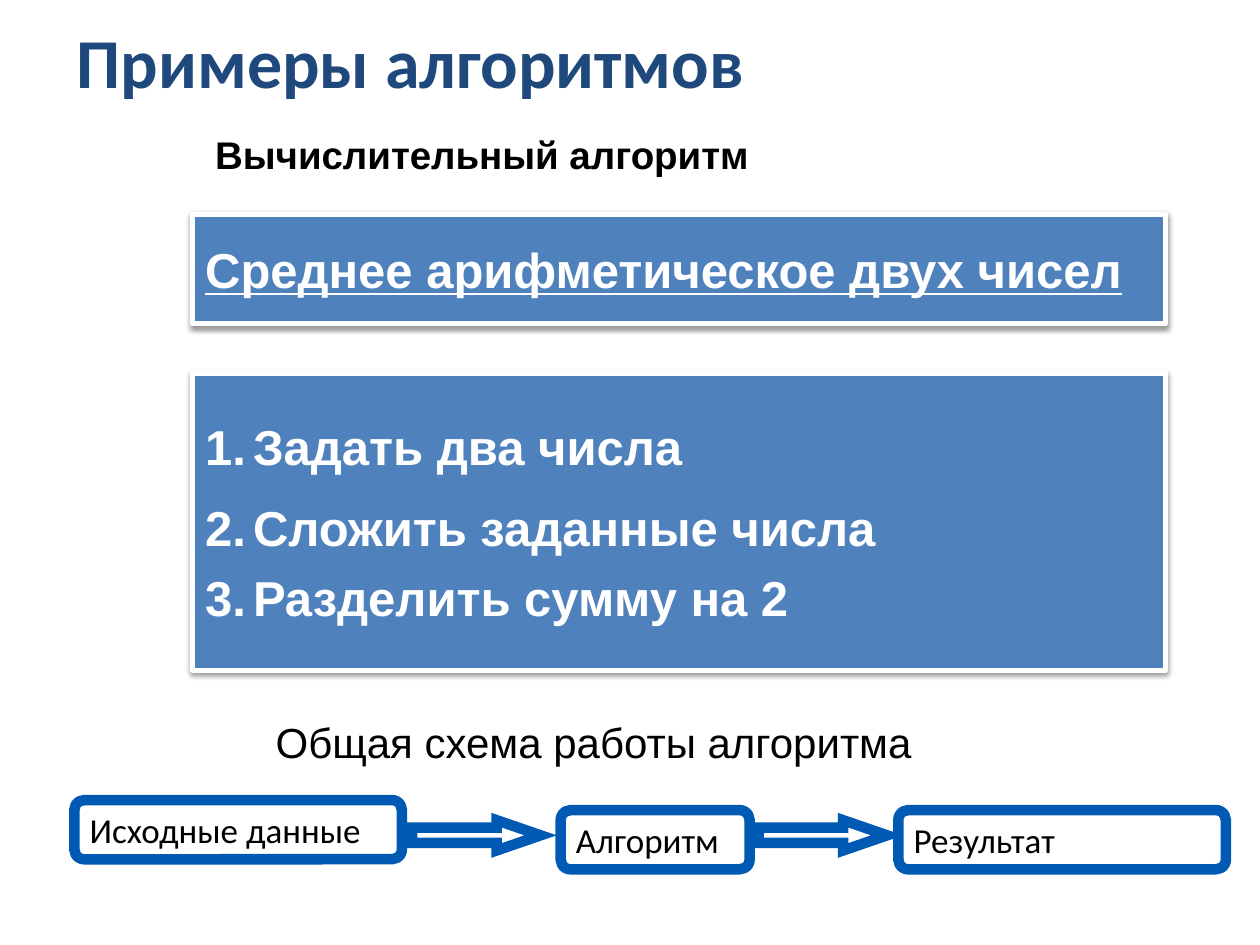
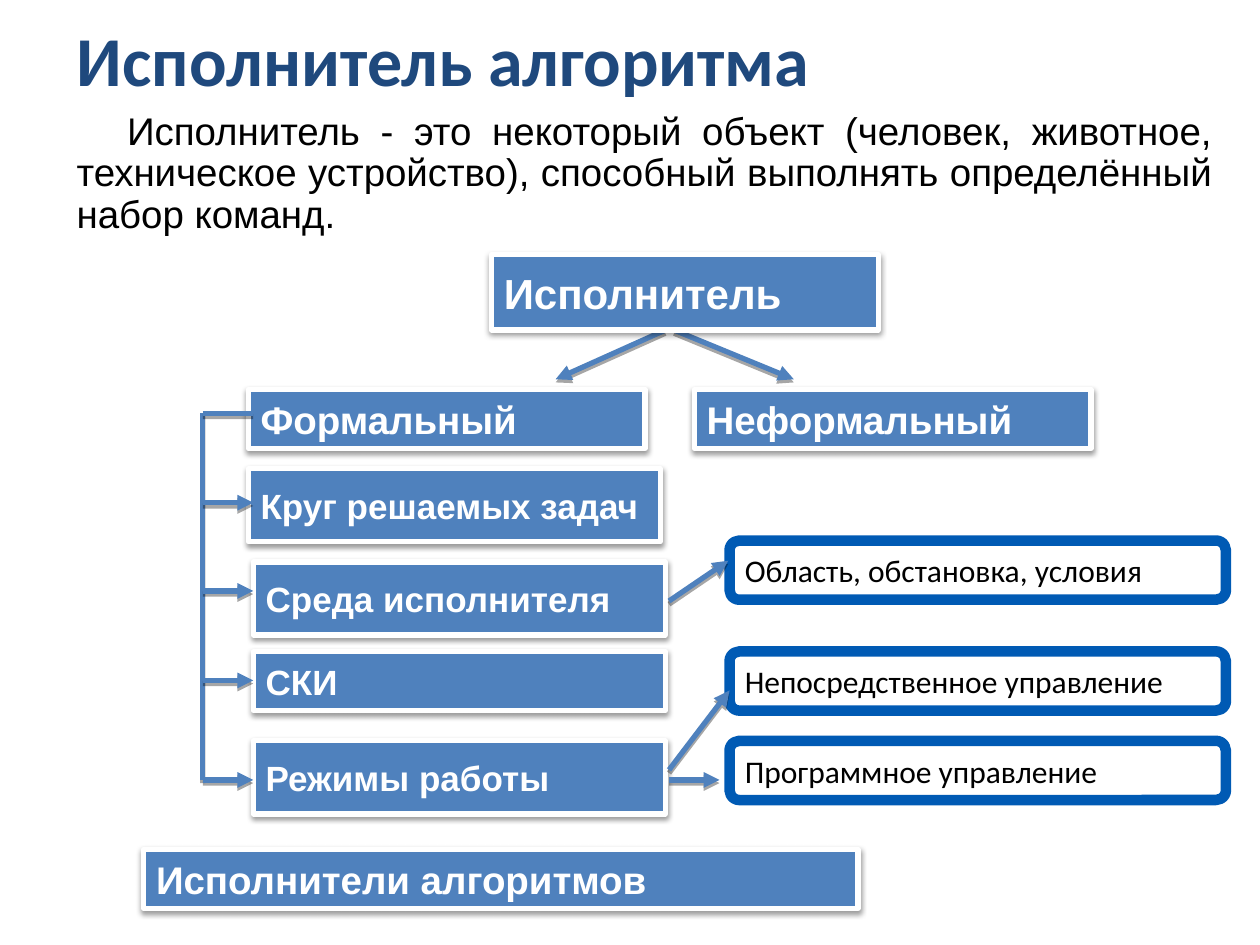
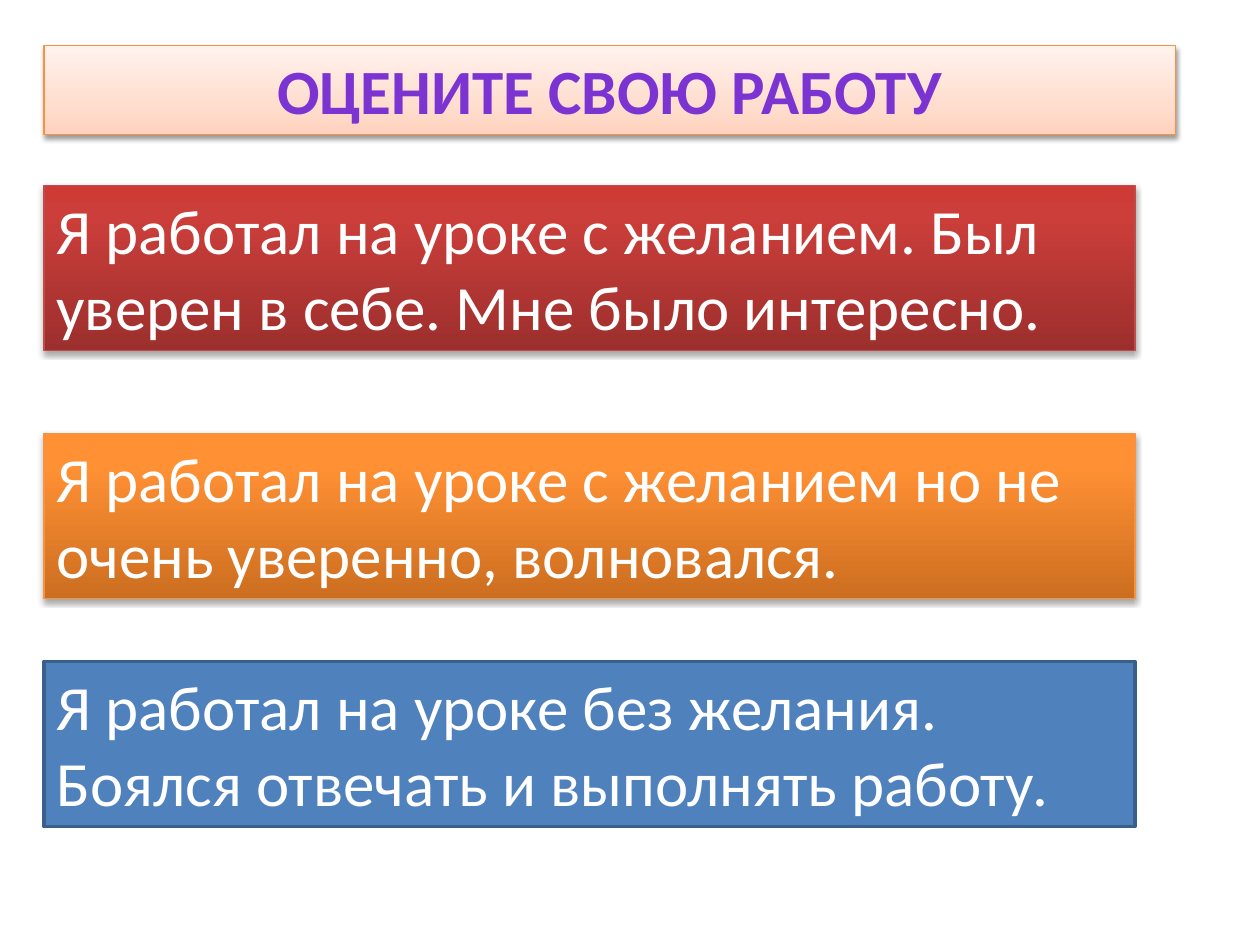
from lxml import etree
from pptx import Presentation
from pptx import util as u
from pptx.dml.color import RGBColor
from pptx.enum import shapes, text
from pptx.oxml.ns import qn

PX = 9144  # 100 px to the inch
NAVY = RGBColor(0x1F, 0x49, 0x7D)
BLUE = RGBColor(0x4F, 0x81, 0xBD)
BLUE_EDGE = RGBColor(0x3A, 0x5F, 0x8C)
FRAME = RGBColor(0x00, 0x5A, 0xB4)
RED_EDGE = RGBColor(0xBF, 0x4C, 0x48)
ORANGE_EDGE = RGBColor(0xF6, 0x92, 0x40)
VIOLET_EDGE = RGBColor(0x5E, 0x45, 0x7C)
WHITE = RGBColor(0xFF, 0xFF, 0xFF)
BLACK = RGBColor(0x00, 0x00, 0x00)

# Gradient stops: percent and colour
PEACH = [(0, "FFD2BD"), (35, "FFDED0"), (100, "FFF2ED")]
RED = [(0, "9C2F2D"), (80, "CB3E3A"), (100, "CE3B37")]
ORANGE = [(0, "CC6E20"), (80, "FF9034"), (100, "FF9136")]
VIOLET = [(0, "3D1B67"), (43, "7B34D2"), (48, "7330C4"), (100, "3D1B67")]

# Shadows: opacity in percent, blur and distance in points
CARD_SHADOW = (38, 3.1, 1.6)
BANNER_SHADOW = (35, 3.1, 1.8)
LINE_SHADOW = (35, 0, 1.8)

LEFT, CENTER, JUSTIFY = text.PP_ALIGN.LEFT, text.PP_ALIGN.CENTER, text.PP_ALIGN.JUSTIFY
TOP, MIDDLE = text.MSO_ANCHOR.TOP, text.MSO_ANCHOR.MIDDLE
RECT, ROUND = shapes.MSO_SHAPE.RECTANGLE, shapes.MSO_SHAPE.ROUNDED_RECTANGLE


def write(box, lines, size, font="Arial", color=BLACK, bold=False, underline=None,
          align=LEFT, anchor=MIDDLE, spacing=None, margin=0, indent=0,
          numbered=False, gaps=None):
    """Fill a shape with one paragraph per line; gaps are (before, after) points."""
    frame = box.text_frame
    frame.word_wrap = True
    frame.auto_size = text.MSO_AUTO_SIZE.NONE
    frame.vertical_anchor = anchor
    for number, line in enumerate(lines.split("\n")):
        para = frame.add_paragraph() if number else frame.paragraphs[0]
        properties = para._p.get_or_add_pPr()
        properties.set("marL", str(margin * PX))
        properties.set("indent", str(indent * PX))
        if numbered:
            etree.SubElement(properties, qn("a:buAutoNum"), type="arabicPeriod")
        para.alignment = align
        if spacing:
            para.line_spacing = spacing
        if gaps:
            before, after = gaps[number]
            para.space_before, para.space_after = u.Pt(before), u.Pt(after)
        span = para.add_run()
        span.text = line
        span.font.name, span.font.size = font, u.Pt(size)
        span.font.bold, span.font.underline = bold, underline
        span.font.color.rgb = color


def paint(item, line, width, fill=None, shadow=None, arrow=False):
    """Set the outline, fill and shadow of a shape or connector."""
    item.line.color.rgb = line
    item.line.width = u.Pt(width)
    if arrow:
        etree.SubElement(item.line._get_or_add_ln(), qn("a:tailEnd"), type="triangle")
    if fill:
        item.fill.solid()
        item.fill.fore_color.rgb = fill
    elif hasattr(item, "fill"):
        item.fill.background()
    effects = etree.SubElement(item._element.spPr, qn("a:effectLst"))
    if shadow:
        opacity, blur, distance = shadow
        outer = etree.SubElement(effects, qn("a:outerShdw"), blurRad=str(u.Pt(blur)),
                                 dist=str(u.Pt(distance)), dir="5400000", rotWithShape="0")
        tone = etree.SubElement(outer, qn("a:srgbClr"), val="000000")
        etree.SubElement(tone, qn("a:alpha"), val=str(opacity * 1000))


deck = Presentation()
deck.slide_width, deck.slide_height = 1000 * PX, 750 * PX
title_only = deck.slide_layouts[5]
examples, performer, review = (deck.slides.add_slide(title_only) for _ in range(3))

# Titles of the first two slides
for page, heading, spacing in [(examples, "Примеры алгоритмов", 0.9),
                               (performer, "Исполнитель алгоритма", 0.8)]:
    title = page.shapes.title
    title.left, title.top, title.width, title.height = 51 * PX, 21 * PX, 899 * PX, 63 * PX
    write(title, heading, 40, font="Calibri", color=NAVY, bold=True, spacing=spacing)

# Plain captions
for page, x, y, width, height, caption, size, style in [
    (examples, 161, 99, 740, 47, "Вычислительный алгоритм", 22, {"bold": True}),
    (examples, 209, 564, 630, 50, "Общая схема работы алгоритма", 24, {}),
    (performer, 51, 84, 921, 109,
     "Исполнитель - это некоторый объект (человек, животное, техническое устройство), "
     "способный выполнять определённый набор команд.", 22,
     {"align": JUSTIFY, "indent": 40, "spacing": 0.9}),
]:
    box = page.shapes.add_textbox(x * PX, y * PX, width * PX, height * PX)
    write(box, caption, size, anchor=TOP, **style)

# Arrows that start under the root card
for x1, x2 in [(535, 630), (528, 441)]:
    branch = performer.shapes.add_connector(
        shapes.MSO_CONNECTOR.STRAIGHT, x1 * PX, 262 * PX, x2 * PX, 301 * PX)
    paint(branch, BLUE, 3, shadow=LINE_SHADOW, arrow=True)

# Blue cards
steps = "Задать два числа\nСложить заданные числа\nРазделить сумму на 2"
step_style = {"align": JUSTIFY, "margin": 38, "indent": -38, "numbered": True,
              "gaps": [(0, 9.6), (3.2, 3.2), (3.2, 3.2)]}
for page, x, y, width, height, label, size, style in [
    (examples, 153, 170, 772, 87, "Среднее арифметическое двух чисел", 28,
     {"underline": True, "align": JUSTIFY}),
    (examples, 153, 296, 772, 236, steps, 28, step_style),
    (performer, 390, 202, 307, 60, "Исполнитель", 24, {}),
    (performer, 197, 309, 315, 47, "Формальный", 22, {}),
    (performer, 551, 309, 315, 47, "Неформальный", 22, {}),
    (performer, 197, 372, 327, 58, "Круг решаемых задач", 20, {}),
    (performer, 201, 446, 327, 58, "Среда исполнителя", 20, {}),
    (performer, 201, 517, 327, 47, "СКИ", 20, {}),
    (performer, 201, 588, 327, 58, "Режимы работы", 20, {}),
    (performer, 114, 674, 567, 47, "Исполнители алгоритмов", 22, {}),
]:
    card = page.shapes.add_shape(RECT, x * PX, y * PX, width * PX, height * PX)
    paint(card, WHITE, 3, fill=BLUE, shadow=CARD_SHADOW)
    write(card, label, size, color=WHITE, bold=True, **style)

# Framed labels
for page, x, y, width, label, size in [
    (examples, 59, 635, 260, "Исходные данные", 20),
    (examples, 445, 643, 150, "Алгоритм", 20),
    (examples, 713, 643, 260, "Результат", 20),
    (performer, 579, 429, 394, "Область, обстановка, условия", 18),
    (performer, 579, 517, 394, "Непосредственное управление", 18),
    (performer, 579, 588, 394, "Программное управление", 18),
]:
    framed = page.shapes.add_shape(ROUND, x * PX, y * PX, width * PX, 47 * PX)
    paint(framed, FRAME, 6)
    write(framed, label, size, font="Calibri")

# Block arrows of the scheme
for x in (327, 602):
    flow = examples.shapes.add_shape(
        shapes.MSO_SHAPE.RIGHT_ARROW, x * PX, 651 * PX, 102 * PX, 24 * PX)
    flow.adjustments[0], flow.adjustments[1] = 0.5, 1.45
    paint(flow, FRAME, 6)
    etree.SubElement(flow.line._get_or_add_ln(), qn("a:miter"), lim="800000")

# Trunk with its branches, then links to the framed labels
links = [(161, 619, 161, 328, False), (161, 328, 201, 328, False)]
links += [(161, y, 201, y, True) for y in (399, 469, 540, 619)]
links += [(531, 477, 578, 445, True), (531, 611, 579, 548, True), (531, 619, 571, 619, True)]
for x1, y1, x2, y2, arrow in links:
    link = performer.shapes.add_connector(
        shapes.MSO_CONNECTOR.STRAIGHT, x1 * PX, y1 * PX, x2 * PX, y2 * PX)
    paint(link, BLUE, 3, shadow=LINE_SHADOW, arrow=arrow)

# Review title
banner = review.shapes.title
banner.left, banner.top, banner.width, banner.height = 35 * PX, 36 * PX, 898 * PX, 71 * PX
paint(banner, ORANGE_EDGE, 0.75, shadow=CARD_SHADOW)
write(banner, "ОЦЕНИТЕ СВОЮ РАБОТУ", 36, font="Calibri", bold=True, align=CENTER, anchor=TOP)
banner_font = banner.text_frame.paragraphs[0].runs[0].font
banner_letters = banner_font._element
gradients = [(banner._element.spPr, banner.fill, PEACH, 90),
             (banner_letters, banner_font.fill, VIOLET, 270)]

# Review answers
for y, answer, edge, width, fill, stops, shadow in [
    (147, "Я работал на уроке с желанием. Был уверен в себе. Мне было интересно.",
     RED_EDGE, 0.75, None, RED, BANNER_SHADOW),
    (344, "Я работал на уроке с желанием но не очень уверенно, волновался.",
     ORANGE_EDGE, 0.75, None, ORANGE, BANNER_SHADOW),
    (525, "Я работал на уроке без желания. Боялся отвечать и выполнять работу.",
     BLUE_EDGE, 2, BLUE, None, None),
]:
    box = review.shapes.add_shape(RECT, 35 * PX, y * PX, 866 * PX, 131 * PX)
    paint(box, edge, width, fill=fill, shadow=shadow)
    write(box, answer, 36, font="Calibri", color=WHITE, anchor=TOP)
    if stops:
        gradients.append((box._element.spPr, box.fill, stops, 90))

# Gradients of the review slide
for parent, fill, stops, angle in gradients:
    fill.gradient()
    fill.gradient_angle = angle
    stop_list = parent.find(qn("a:gradFill")).find(qn("a:gsLst"))
    for old_stop in list(stop_list):
        stop_list.remove(old_stop)
    for percent, tone in stops:
        stop = etree.SubElement(stop_list, qn("a:gs"), pos=str(percent * 1000))
        etree.SubElement(stop, qn("a:srgbClr"), val=tone)

# Thin outline of the review title letters
outline = etree.Element(qn("a:ln"), w=str(u.Pt(0.71)))
outline_fill = etree.SubElement(outline, qn("a:solidFill"))
etree.SubElement(outline_fill, qn("a:srgbClr"), val=str(VIOLET_EDGE))
banner_letters.insert(0, outline)

deck.save("out.pptx")
